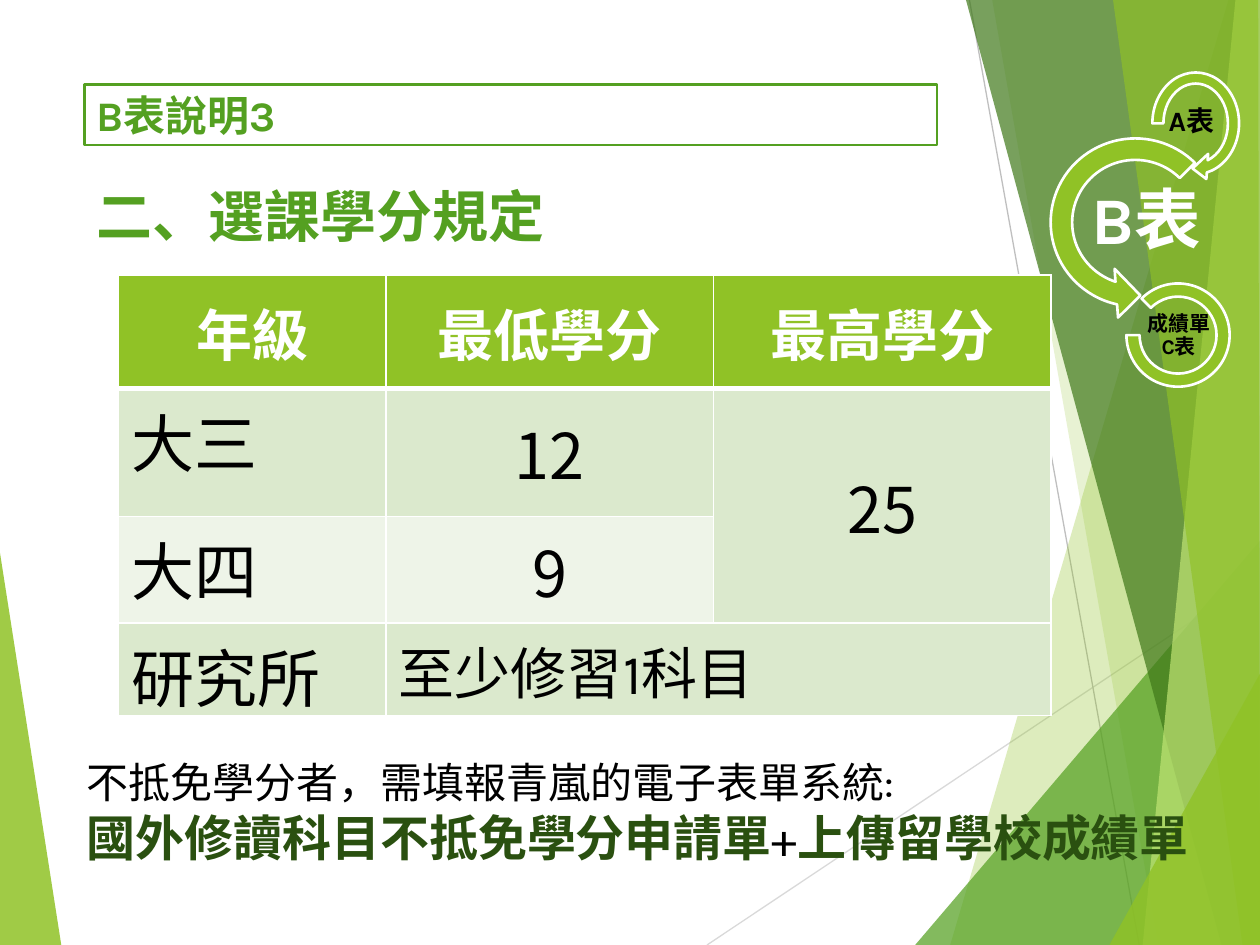
from lxml import etree
from pptx import Presentation
from pptx.dml.color import RGBColor
from pptx.enum import shapes, text
from pptx.oxml import ns
from pptx.util import Pt

COLORS = {
    "white": "FFFFFF", "black": "000000", "lime": "90C226", "green": "54A021",
    "forest": "3F7819", "pale": "C0E474", "deep": "2A5010",
    "band": "DBE9CD", "light band": "EEF4E8", "gray": "BFBFBF", "light gray": "D9D9D9",
}
CENTER = text.PP_ALIGN.CENTER
MIDDLE = text.MSO_ANCHOR.MIDDLE
TOP = text.MSO_ANCHOR.TOP

# Decorative facets: corner points, colour, opacity in percent
LEFT_FACET = ([(0, 316), (35, 540), (0, 540)], "lime", 85)
RIGHT_FACETS = [
    ([(702, 0), (543, 540), (720, 540), (720, 0)], "lime", 30),
    ([(567, 0), (662, 540), (720, 540), (720, 0)], "lime", 20),
    ([(523, 540), (720, 309), (720, 540)], "green", 72),
    ([(552, 0), (698, 540), (720, 540), (720, 0)], "forest", 70),
    ([(706, 0), (653, 540), (720, 540), (720, 0)], "pale", 70),
    ([(636, 0), (710, 540), (720, 540), (719, 0)], "lime", 65),
    ([(634, 540), (720, 385), (720, 540)], "lime", 80),
]


def rgb(name):
    return RGBColor.from_string(COLORS[name])


def points(*lengths):
    return [Pt(length) for length in lengths]


def add_run(paragraph, words, size=24, color="black", bold=False, font="Karla"):
    run = paragraph.add_run()
    run.text = words
    run.font.size = Pt(size)
    run.font.bold = bold
    run.font.name = font
    run.font.color.rgb = rgb(color)


def write(frame, words, align=None, spacing=None, before=None, **font_format):
    paragraph = frame.paragraphs[0]
    paragraph.alignment = align
    paragraph.line_spacing = spacing
    if before:
        paragraph.space_before = Pt(before)
    add_run(paragraph, words, **font_format)


def add_text_box(slide, box, anchor=TOP, inset=None):
    frame = slide.shapes.add_textbox(*points(*box)).text_frame
    frame.word_wrap = True
    frame.vertical_anchor = anchor
    if inset is not None:
        frame.margin_left = frame.margin_right = Pt(inset)
        frame.margin_top = frame.margin_bottom = Pt(inset)
    return frame


def add_facet(slide, corners, color, opacity):
    builder = slide.shapes.build_freeform(*corners[0], scale=Pt(1))
    builder.add_line_segments(corners[1:], close=True)
    facet = builder.convert_to_shape()
    facet.shadow.inherit = False
    facet.line.fill.background()
    facet.fill.solid()
    facet.fill.fore_color.rgb = rgb(color)
    srgb = facet.fill._xPr.find(".//" + ns.qn("a:srgbClr"))
    etree.SubElement(srgb, ns.qn("a:alpha"), val=str(opacity * 1000))


def add_thin_line(slide, ends, color):
    line = slide.shapes.add_connector(shapes.MSO_CONNECTOR.STRAIGHT, *points(*ends))
    line.line.color.rgb = rgb(color)
    line.line.width = Pt(0.75)
    etree.SubElement(line._element.spPr, ns.qn("a:effectLst"))


def add_preset(slide, kind, box, fill, outline, adjustments=()):
    shape = slide.shapes.add_shape(kind, *points(*box))
    shape.shadow.inherit = False
    shape.fill.solid()
    shape.fill.fore_color.rgb = rgb(fill)
    shape.line.color.rgb = rgb(outline)
    shape.line.width = Pt(1.5)
    for index, value in enumerate(adjustments):
        shape.adjustments[index] = value
    return shape


def set_borders(cell, bottom=1):
    properties = cell._tc.get_or_add_tcPr()
    for index, side in enumerate(("lnL", "lnR", "lnT", "lnB")):
        width = Pt(bottom if side == "lnB" else 1)
        border = etree.Element(ns.qn("a:" + side), w=str(width))
        fill = etree.SubElement(border, ns.qn("a:solidFill"))
        etree.SubElement(fill, ns.qn("a:srgbClr"), val=COLORS["white"])
        properties.insert(index, border)


def add_background(slide):
    add_facet(slide, *LEFT_FACET)
    add_thin_line(slide, (404, 540, 720, 329), "light gray")
    add_thin_line(slide, (554, 0, 651, 540), "gray")
    for facet in RIGHT_FACETS:
        add_facet(slide, *facet)


def add_form_cycle(slide):
    kinds = shapes.MSO_SHAPE
    stages = [
        (kinds.CIRCULAR_ARROW, (654.5, 37.4, 57.6, 66.2), (0.11, 11.42, 45, 108, 0.125),
         "A表", (666, 54.7, 29.5, 30.2), 0.7, 16, "black"),
        (kinds.LEFT_CIRCULAR_ARROW, (592.6, 71.3, 112.3, 111.6), (0.11, 11.42, 63, 189, 0.125),
         "B表", (610.6, 94.3, 89.3, 66.2), 2, 38, "white"),
        (kinds.BLOCK_ARC, (643.7, 162, 59, 59), (135, 108, 0.127),
         "成績單C表", (654.5, 173.5, 38.2, 37.4), 0.7, 12, "black"),
    ]
    for kind, arc_box, adjustments, label, label_box, inset, size, color in stages:
        add_preset(slide, kind, arc_box, "lime", "white", adjustments)
        frame = add_text_box(slide, label_box, MIDDLE, inset)
        write(frame, label, align=CENTER, spacing=0.9, size=size, color=color, bold=True)


def add_headings(slide):
    heading = add_text_box(slide, (48.2, 100, 610, 50))
    write(heading, "二、選課學分規定", before=10, size=32, color="green", bold=True, font="Arial")
    title = add_preset(slide, shapes.MSO_SHAPE.RECTANGLE, (48.2, 48.2, 487.4, 34.6),
                       "white", "green")
    title.text_frame.vertical_anchor = MIDDLE
    write(title.text_frame, "B表說明3", align=text.PP_ALIGN.LEFT,
          size=24, color="green", bold=True)


def add_credit_table(slide):
    widths, heights = (153, 187, 193), (65, 73, 61, 53)
    rows = [("年級", "最低學分", "最高學分"),
            ("大三", "12", "25"),
            ("大四", "9", ""),
            ("研究所", "至少修習1科目", "")]
    table = slide.shapes.add_table(
        4, 3, *points(67.7, 157, sum(widths), sum(heights))).table
    for column, width in zip(table.columns, widths):
        column.width = Pt(width)
    for row, height in zip(table.rows, heights):
        row.height = Pt(height)
    table.cell(1, 2).merge(table.cell(2, 2))
    table.cell(3, 1).merge(table.cell(3, 2))

    fills = ("lime", "band", "light band", "band")
    for r, words_in_row in enumerate(rows):
        for c, words in enumerate(words_in_row):
            cell = table.cell(r, c)
            cell.fill.solid()
            cell.fill.fore_color.rgb = rgb(fills[r])
            set_borders(cell, bottom=3 if r == 0 else 1)
            if not words:
                continue
            header, number = r == 0, words.isdigit()
            centered = header or number
            cell.vertical_anchor = MIDDLE if centered else TOP
            write(cell.text_frame, words, align=CENTER if centered else None,
                  size=32 if header or (r, c) == (3, 1) else 36,
                  color="white" if header else "black", bold=header,
                  font="Noto Sans CJK SC" if number else "Karla")


def add_waiver_note(slide):
    frame = add_text_box(slide, (42.5, 429, 652.3, 70.6))
    write(frame, "不抵免學分者，需填報青嵐的電子表單系統:", size=24)
    forms = frame.add_paragraph()
    add_run(forms, "國外修讀科目不抵免學分申請單", size=28, color="deep", bold=True)
    add_run(forms, "+", size=28)
    add_run(forms, "上傳留學校成績單", size=28, color="deep", bold=True)


def main():
    deck = Presentation()
    deck.slide_width, deck.slide_height = Pt(720), Pt(540)
    slide = deck.slides.add_slide(deck.slide_layouts[6])
    add_background(slide)
    add_form_cycle(slide)
    add_headings(slide)
    add_credit_table(slide)
    add_waiver_note(slide)
    deck.save("out.pptx")


if __name__ == "__main__":
    main()
